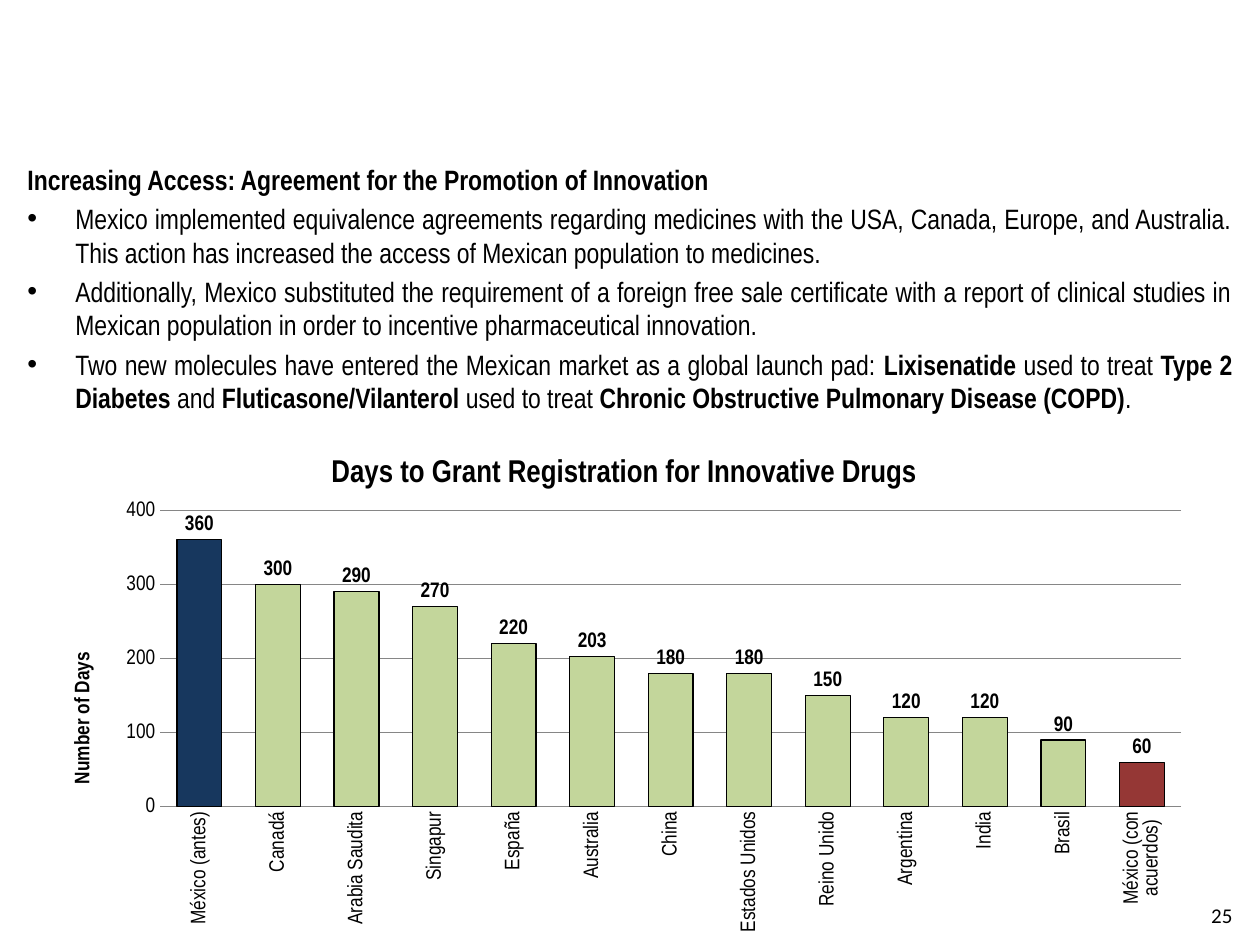
import pptx
import pptx.chart.data
import pptx.dml.color
import pptx.enum.chart
import pptx.enum.text
import pptx.oxml
import pptx.oxml.ns
import pptx.util
from pptx.util import Inches

COLORS = {"text": "000000", "grid": "868686", "bar": "C3D69B",
          "before": "17375E", "after": "953735"}
NARROW = "Arial Narrow"
HEADING = "Increasing Access: Agreement for the Promotion of Innovation"
BULLETS = [
    [("Mexico implemented equivalence agreements regarding medicines with the USA, Canada, "
      "Europe, and Australia. This action has increased the access of Mexican population "
      "to medicines. ", False)],
    [("Additionally, Mexico substituted the requirement of a foreign free sale certificate "
      "with a report of clinical studies in Mexican population in order to incentive "
      "pharmaceutical innovation.", False)],
    [("Two new molecules have entered the Mexican market as a global launch pad: ", False),
     ("Lixisenatide ", True), ("used to treat ", False), ("Type 2 Diabetes ", True),
     ("and ", False), ("Fluticasone/Vilanterol ", True), ("used to treat ", False),
     ("Chronic Obstructive Pulmonary Disease (COPD)", True), (". ", False)],
]
DAYS = {"México (antes)": 360, "Canadá": 300, "Arabia Saudita": 290, "Singapur": 270,
        "España": 220, "Australia": 203, "China": 180, "Estados Unidos": 180,
        "Reino Unido": 150, "Argentina": 120, "India": 120, "Brasil": 90,
        "México (con\nacuerdos)": 60}


class SlideStyle:
    def __init__(self, page):
        self.page = page

    def color(self, name):
        return pptx.dml.color.RGBColor.from_string(COLORS[name])

    def font(self, font, size, bold=False, name=NARROW):
        font.name = name
        font.size = pptx.util.Pt(size)
        font.bold = bold
        font.color.rgb = self.color("text")

    def box(self, left, top, width, height):
        frame = self.page.shapes.add_textbox(
            Inches(left), Inches(top), Inches(width), Inches(height)).text_frame
        frame.word_wrap = True
        return frame

    def paragraph(self, para, spans, size, align, name=NARROW):
        para.alignment = align
        for text, bold in spans:
            span = para.add_run()
            span.text = text
            self.font(span.font, size, bold, name)

    def bullet(self, para):
        props = para._p.get_or_add_pPr()
        props.set("marL", str(Inches(0.38)))
        props.set("indent", str(Inches(-0.38)))
        for tag in ('buFont typeface="Arial"', 'buChar char="•"'):
            props.append(pptx.oxml.parse_xml(
                f'<a:{tag} {pptx.oxml.ns.nsdecls("a")}/>'))
        para.space_before = pptx.util.Pt(3.2)

    def layout(self, parent, index, x, y, width=None, height=None):
        for old in parent.findall(pptx.oxml.ns.qn("c:layout")):
            parent.remove(old)
        target = "" if width is None else '<c:layoutTarget val="inner"/>'
        values = {"x": x, "y": y, "w": width, "h": height}
        modes = '<c:xMode val="edge"/><c:yMode val="edge"/>'
        sizes = "".join(f'<c:{key} val="{value}"/>' for key, value in values.items()
                        if value is not None)
        parent.insert(index, pptx.oxml.parse_xml(
            f'<c:layout {pptx.oxml.ns.nsdecls("c")}><c:manualLayout>'
            f'{target}{modes}{sizes}</c:manualLayout></c:layout>'))

    def title(self, title, text, size):
        para = title.text_frame.paragraphs[0]
        span = para.add_run()
        span.text = text
        self.font(span.font, size, True)

    def column_chart(self, left, top, width, height, values, title, axis_title):
        data = pptx.chart.data.CategoryChartData()
        data.categories = list(values)
        data.add_series("Series 1", list(values.values()))
        chart = self.page.shapes.add_chart(
            pptx.enum.chart.XL_CHART_TYPE.COLUMN_CLUSTERED,
            Inches(left), Inches(top), Inches(width), Inches(height), data).chart
        self.font(chart.font, 12)
        chart.has_legend = False
        chart.has_title = True
        self.title(chart.chart_title, title, 18)
        chart.chart_title.include_in_layout = False
        self.layout(chart._chartSpace.chart.plotArea, 0, 0.1, 0.15, 0.88, 0.58)
        self.axes(chart, axis_title)
        self.columns(chart.plots[0])

    def axes(self, chart, axis_title):
        none = pptx.enum.chart.XL_TICK_MARK.NONE
        for axis in (chart.category_axis, chart.value_axis):
            axis.major_tick_mark = none
            axis.minor_tick_mark = none
            self.font(axis.tick_labels.font, 12)
        chart.category_axis.format.line.color.rgb = self.color("grid")
        names = chart.category_axis.tick_labels.font._element.getparent().getparent().getparent()
        names.find(pptx.oxml.ns.qn("a:bodyPr")).set("rot", "-5400000")
        scale = chart.value_axis
        scale.minimum_scale, scale.maximum_scale, scale.major_unit = 0, 400, 100
        scale.format.line.fill.background()
        scale.has_major_gridlines = True
        scale.major_gridlines.format.line.color.rgb = self.color("grid")
        scale.has_title = True
        self.title(scale.axis_title, axis_title, 12)
        self.layout(scale.axis_title._element, 1, 0.02, 0.42)

    def columns(self, plot):
        plot.gap_width = 75
        plot.overlap = -25
        plot.vary_by_categories = False
        series = plot.series[0]
        last = len(series.values) - 1
        targets = [(series, "bar"), (series.points[0], "before"),
                   (series.points[last], "after")]
        for target, name in targets:
            target.format.fill.solid()
            target.format.fill.fore_color.rgb = self.color(name)
            target.format.line.color.rgb = self.color("text")
            target.format.line.width = pptx.util.Pt(0.75)
        labels = series.data_labels
        labels.show_value = True
        labels.position = pptx.enum.chart.XL_LABEL_POSITION.OUTSIDE_END
        self.font(labels.font, 12, True)


def main():
    deck = pptx.Presentation()
    deck.slide_width, deck.slide_height = Inches(10), Inches(7.5)
    style = SlideStyle(deck.slides.add_slide(deck.slide_layouts[6]))
    align = pptx.enum.text.PP_ALIGN

    body = style.box(0.12, 1.24, 9.76, 1.96)
    style.paragraph(body.paragraphs[0], [(HEADING, True)], 16, align.JUSTIFY)
    for spans in BULLETS:
        para = body.add_paragraph()
        style.bullet(para)
        style.paragraph(para, spans, 16, align.JUSTIFY)

    number = style.box(7.56, 7.07, 2.32, 0.39)
    number.vertical_anchor = pptx.enum.text.MSO_ANCHOR.MIDDLE
    style.paragraph(number.paragraphs[0], [("25", False)], 12, align.RIGHT, "Calibri")

    style.column_chart(0.35, 3.44, 9.21, 4.06, DAYS,
                       "Days to Grant Registration for Innovative Drugs", "Number of Days")
    deck.save("out.pptx")


if __name__ == "__main__":
    main()
